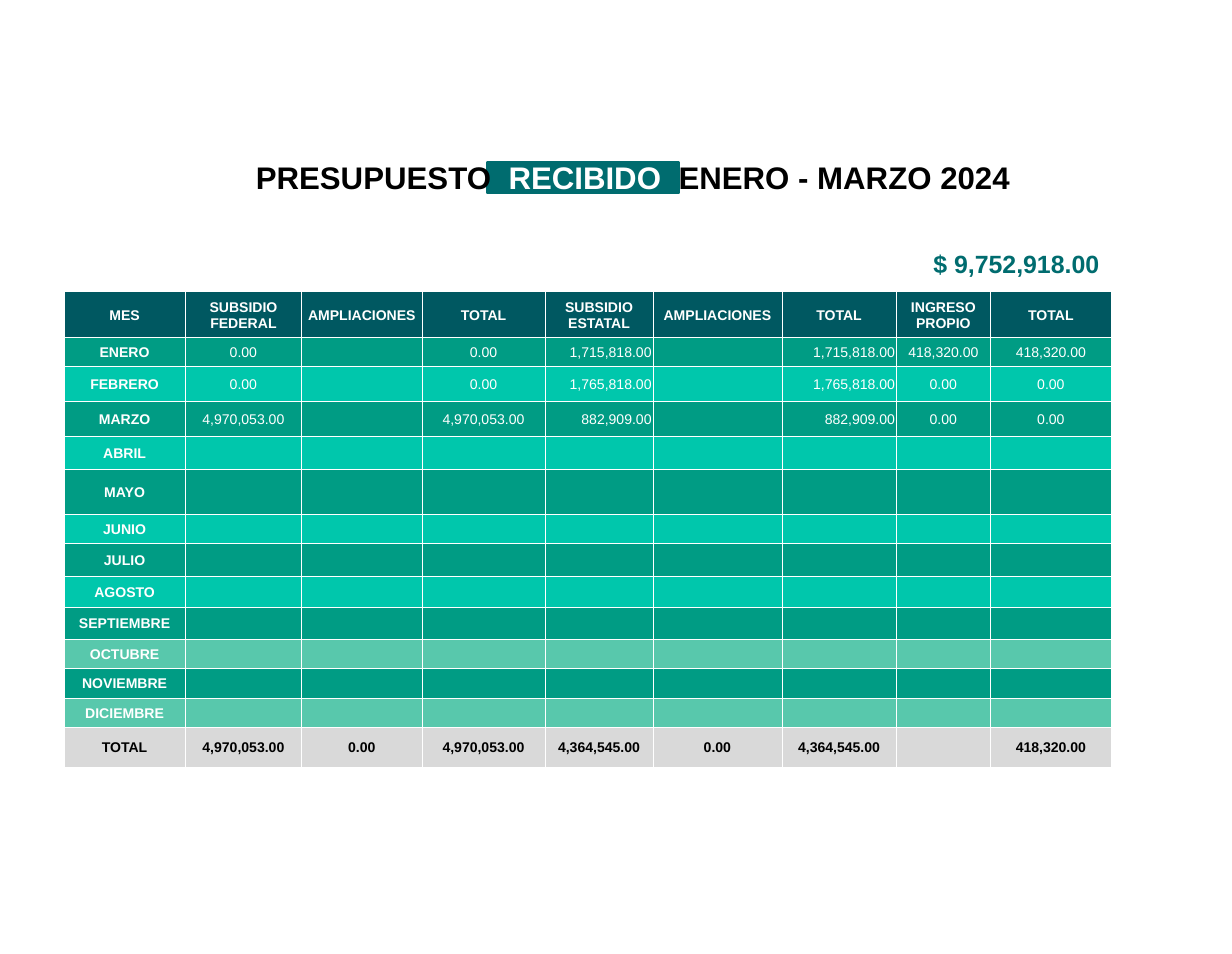
from lxml import etree
from pptx import Presentation
from pptx.dml.color import RGBColor
from pptx.enum import shapes, text
from pptx.oxml import ns
from pptx.util import Cm, Pt

BLACK = RGBColor(0x00, 0x00, 0x00)
WHITE = RGBColor(0xFF, 0xFF, 0xFF)
TEAL = RGBColor(0x00, 0x6C, 0x6F)
HEADER = RGBColor(0x00, 0x58, 0x61)
GREEN = RGBColor(0x00, 0x9C, 0x84)
AQUA = RGBColor(0x00, 0xC7, 0xAC)
MINT = RGBColor(0x58, 0xC8, 0xAC)
GREY = RGBColor(0xD9, 0xD9, 0xD9)

COLUMN_WIDTHS = [2.74, 2.64, 2.72, 2.79, 2.44, 2.92, 2.59, 2.13, 2.74]
RIGHT_COLUMNS = (4, 6)
HEADINGS = ["MES", "SUBSIDIO FEDERAL", "AMPLIACIONES", "TOTAL", "SUBSIDIO\nESTATAL",
            "AMPLIACIONES", "TOTAL", "INGRESO PROPIO", "TOTAL"]
MONTHS = [
    (0.66, GREEN, ["ENERO", "0.00", "", "0.00", "1,715,818.00", "", "1,715,818.00",
                   "418,320.00", "418,320.00"]),
    (0.79, AQUA, ["FEBRERO", "0.00", "", "0.00", "1,765,818.00", "", "1,765,818.00",
                  "0.00", "0.00"]),
    (0.79, GREEN, ["MARZO", "4,970,053.00", "", "4,970,053.00", "882,909.00", "",
                   "882,909.00", "0.00", "0.00"]),
    (0.74, AQUA, ["ABRIL"]),
    (1.02, GREEN, ["MAYO"]),
    (0.66, AQUA, ["JUNIO"]),
    (0.74, GREEN, ["JULIO"]),
    (0.71, AQUA, ["AGOSTO"]),
    (0.71, GREEN, ["SEPTIEMBRE"]),
    (0.66, MINT, ["OCTUBRE"]),
    (0.69, GREEN, ["NOVIEMBRE"]),
    (0.66, MINT, ["DICIEMBRE"]),
]
TOTALS = ["TOTAL", "4,970,053.00", "0.00", "4,970,053.00", "4,364,545.00", "0.00",
          "4,364,545.00", "", "418,320.00"]


def set_font(font, size, color, bold=True):
    """Apply the slide's typeface with a size, colour and weight."""
    font.name, font.size, font.bold = "Arial", Pt(size), bold
    font.color.rgb = color


def set_margins(holder, side, top, bottom):
    """Set the inner margins of a cell or text frame, in centimetres."""
    holder.margin_left = holder.margin_right = Cm(side)
    holder.margin_top, holder.margin_bottom = Cm(top), Cm(bottom)


def add_title(slide, left, top, width, height):
    """Place the title with its highlighted word."""
    bar = slide.shapes.add_shape(shapes.MSO_SHAPE.RECTANGLE, Cm(left + 5.49),
                                 Cm(top + 0.23), Cm(4.34), Cm(0.69))
    bar.shadow.inherit = False
    bar.fill.solid()
    bar.fill.fore_color.rgb = TEAL
    bar.line.color.rgb = TEAL
    bar.line.width = Pt(1.5)
    slide.shapes._spTree.insert(2, bar._element)

    title = slide.shapes.title
    title.left, title.top, title.width, title.height = map(Cm, (left, top, width, height))
    tf = title.text_frame
    tf.word_wrap = True
    tf.auto_size = text.MSO_AUTO_SIZE.NONE
    tf.vertical_anchor = text.MSO_ANCHOR.TOP
    set_margins(tf, 0.25, 0.13, 0.13)
    p = tf.paragraphs[0]
    p.alignment = text.PP_ALIGN.LEFT
    for words, color in (("PRESUPUESTO", BLACK), (" ", BLACK), ("RECIBIDO", WHITE),
                         (" ", BLACK), ("ENERO - MARZO 2024", BLACK)):
        r = p.add_run()
        r.text = words
        set_font(r.font, 20, color)
        if words == " ":
            r._r.get_or_add_rPr().set("spc", "556")


def add_amount(slide, left, top, width, height):
    """Place the overall amount received."""
    tf = slide.shapes.add_textbox(*map(Cm, (left, top, width, height))).text_frame
    tf.word_wrap = False
    p = tf.paragraphs[0]
    p.text = "$ 9,752,918.00"
    set_font(p.font, 16, TEAL)


def add_borders(cell):
    """Draw thin white lines on all sides of a cell."""
    tc_pr = cell._tc.get_or_add_tcPr()
    for i, side in enumerate(("a:lnL", "a:lnR", "a:lnT", "a:lnB")):
        ln = etree.Element(ns.qn(side), w=str(Pt(0.5)))
        fill = etree.SubElement(ln, ns.qn("a:solidFill"))
        etree.SubElement(fill, ns.qn("a:srgbClr"), val=str(WHITE))
        tc_pr.insert(i, ln)


def fill_cell(cell, words, fill, color, bold, align):
    """Write and format one table cell."""
    cell.text = words
    cell.fill.solid()
    cell.fill.fore_color.rgb = fill
    cell.vertical_anchor = text.MSO_ANCHOR.MIDDLE
    set_margins(cell, 0.03, 0.03, 0)
    for p in cell.text_frame.paragraphs:
        p.alignment = align
        set_font(p.font, 9, color, bold)
        if not words:
            p._p.get_or_add_endParaRPr().set("sz", "900")
    add_borders(cell)


def add_budget_table(slide, left, top):
    """Place the monthly budget table."""
    rows = [(1.04, HEADER, HEADINGS), *MONTHS, (0.89, GREY, TOTALS)]
    width, height = sum(COLUMN_WIDTHS), sum(row[0] for row in rows)
    table = slide.shapes.add_table(len(rows), len(COLUMN_WIDTHS), Cm(left), Cm(top),
                                   Cm(width), Cm(height)).table
    for column, column_width in zip(table.columns, COLUMN_WIDTHS):
        column.width = Cm(column_width)
    for i, (row_height, fill, values) in enumerate(rows):
        table.rows[i].height = Cm(row_height)
        is_month = fill not in (HEADER, GREY)
        for j in range(len(COLUMN_WIDTHS)):
            words = values[j] if j < len(values) else ""
            right = is_month and j in RIGHT_COLUMNS
            fill_cell(table.cell(i, j), words, fill, BLACK if fill == GREY else WHITE,
                      not is_month or j == 0,
                      text.PP_ALIGN.RIGHT if right else text.PP_ALIGN.CENTER)


def main():
    """Build and save the budget slide."""
    prs = Presentation()
    prs.slide_width, prs.slide_height = Cm(27.89), Cm(21.59)
    slide = prs.slides.add_slide(prs.slide_layouts[5])
    add_title(slide, 5.54, 3.45, 18.14, 1.12)
    add_amount(slide, 20.88, 5.51, 4.32, 1.42)
    add_budget_table(slide, 1.45, 6.6)
    prs.save("out.pptx")


if __name__ == "__main__":
    main()
